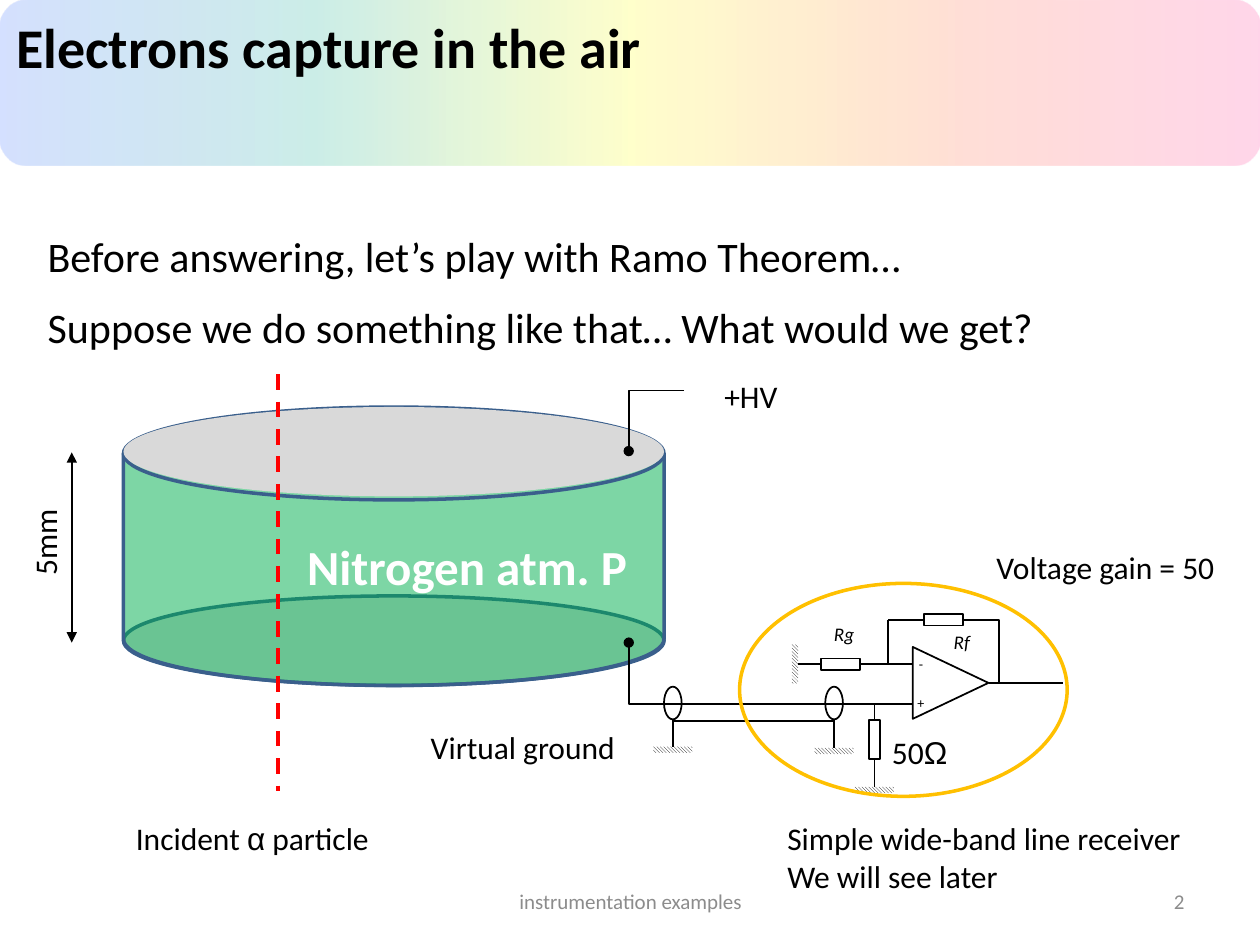
from lxml.etree import SubElement
from pptx import Presentation
from pptx.dml.color import RGBColor
from pptx.enum.dml import MSO_LINE, MSO_PATTERN
from pptx.enum.shapes import MSO_CONNECTOR, MSO_SHAPE
from pptx.enum.text import MSO_ANCHOR, MSO_AUTO_SIZE, PP_ALIGN
from pptx.oxml.ns import qn
from pptx.util import Inches, Pt

THEME = dict(
    font="Calibri", symbol="Arial",
    ink="000000", paper="FFFFFF", muted="8C8C8C", plate="D9D9D9", wall="3A5F8C",
    gas="00B050", particle="FF0000", ring="FFC000",
    rainbow=["FF3399", "FF6633", "FFFF00", "01A78F", "3366FF"],
    title=32, gas_label=28, body=24, label=18, footer=12, part=11, sign=8,
)
TOP, LEFT, BOTTOM, RIGHT = range(4)
W, H = 10, 7.5

# paragraphs of (text, font) runs, box, format
TEXTS = [
    ("Electrons capture in the air", (0.03, 0.05, 5.21, 0.64), dict(size="title", bold=True)),
    ("instrumentation examples", (3.42, 6.95, 3.17, 0.4),
     dict(size="footer", color="muted", align=PP_ALIGN.CENTER, middle=True, wrap=True)),
    ("2", (7.17, 6.95, 2.33, 0.4),
     dict(size="footer", color="muted", align=PP_ALIGN.RIGHT, middle=True, wrap=True)),
    ("Before answering, let’s play with Ramo Theorem…", (0.28, 1.78, 7.06, 0.5), dict(size="body")),
    ("Suppose we do something like that… What would we get?", (0.28, 2.34, 8.09, 0.5),
     dict(size="body")),
    ("5mm", (-0.01, 4.1, 0.73, 0.4), dict(rotation=270)),
    ("+HV", (5.65, 2.94, 0.63, 0.4), {}),
    ("Virtual ground", (3.32, 5.73, 1.68, 0.4), {}),
    ("Rf", (7.47, 4.95, 0.33, 0.29), dict(size="part", italic=True)),
    ("Rg", (6.52, 4.89, 0.36, 0.29), dict(size="part", italic=True)),
    ([[("50", "font"), ("Ω", "symbol")]], (6.98, 5.77, 0.65, 0.4), {}),
    ([[("Simple wide-band line receiver", "font")], [("We will see later", "font")]],
     (6.15, 6.45, 3.37, 0.71), {}),
    ([[("Incident ", "font"), ("α", "symbol"), (" particle", "font")]],
     (0.98, 6.45, 2.09, 0.4), {}),
    ("Nitrogen atm. P", (2.34, 4.21, 2.77, 0.57),
     dict(size="gas_label", color="paper", bold=True)),
    ("Voltage gain = 50", (7.81, 4.3, 1.95, 0.4), {}),
]

# circuit: long and short side of a resistor or a ground, centres of each part
RES, GND = (0.31, 0.09), (0.31, 0.05)
RESISTORS = {"Rf": (7.49, 4.92, False), "Rg": (6.67, 5.27, False), "R50": (6.94, 5.87, True)}
GROUNDS = {"gnd Rg": (6.31, 5.27, True), "gnd R50": (6.94, 6.27, False),
           "gnd near": (5.34, 5.95, False), "gnd far": (6.62, 5.96, False)}
COAX_X, COAX_SIZE, COAX_Y = (5.34, 6.62), (0.14, 0.26), 5.58
SIGNS = {"+": 5.58, "-": 5.27}

# each end is a point or (part, connection site)
WIRES = [
    ((7.24, 5.59), (7.07, 5.59)),
    (("gnd Rg", RIGHT), ("Rg", LEFT)),
    (("Rg", RIGHT), (7.24, 5.27)),
    ((7.05, 4.92), (7.05, 5.27)),
    ((7.05, 4.92), ("Rf", LEFT)),
    (("Rf", RIGHT), (7.76, 4.92)),
    ((6.94, 5.59), ("R50", TOP)),
    (("R50", BOTTOM), ("gnd R50", TOP)),
    ((5.34, 5.71), ("gnd near", TOP)),
    ((6.62, 5.71), ("gnd far", TOP)),
    ((5.34, 5.72), (6.62, 5.72)),
    ((7.85, 5.42), (8.44, 5.42)),
]
HV_LEAD = [(5.43, 3.1), (4.99, 3.1), (4.99, 3.58)]
SIGNAL_LEAD = [(7.07, 5.59), (4.99, 5.59), (4.99, 5.1)]
FEEDBACK = [(7.93, 5.42), (7.93, 4.92), (7.76, 4.92)]


def rgb(name):
    return RGBColor.from_string(THEME[name])


def box_at(cx, cy, size, upright=False):
    w, h = size[::-1] if upright else size
    return cx - w / 2, cy - h / 2, w, h


def write(tf, text, size="label", color="ink", bold=False, italic=False,
          align=PP_ALIGN.LEFT, middle=False, wrap=False):
    tf.word_wrap = wrap
    tf.vertical_anchor = MSO_ANCHOR.MIDDLE if middle else MSO_ANCHOR.TOP
    paragraphs = [[(text, "font")]] if isinstance(text, str) else text
    for i, runs in enumerate(paragraphs):
        p = tf.add_paragraph() if i else tf.paragraphs[0]
        p.alignment = align
        for words, face in runs:
            r = p.add_run()
            r.text = words
            f = r.font
            f.name, f.size, f.bold, f.italic = THEME[face], Pt(THEME[size]), bold, italic
            f.color.rgb = rgb(color)


def add_text(slide, text, box, rotation=0, **fmt):
    s = slide.shapes.add_textbox(*map(Inches, box))
    s.rotation = rotation
    write(s.text_frame, text, **fmt)
    if not fmt.get("wrap"):
        s.text_frame.auto_size = MSO_AUTO_SIZE.SHAPE_TO_FIT_TEXT


def set_line(s, color, width=1, **ends):
    if not color:
        s.line.fill.background()
        return
    s.line.color.rgb, s.line.width = rgb(color), Pt(width)
    for end, kind in ends.items():
        SubElement(s.line._get_or_add_ln(), qn(f"a:{end}End")).set("type", kind)


def add_shape(slide, kind, box, fill=None, line=None, width=1, rotation=0):
    s = slide.shapes.add_shape(kind, *map(Inches, box))
    s.shadow.inherit = False
    s.rotation = rotation
    if fill:
        s.fill.solid()
        s.fill.fore_color.rgb = rgb(fill)
    else:
        s.fill.background()
    set_line(s, line, width)
    return s


def add_wire(slide, begin, end, parts, color="ink", width=1, dash=None, **ends):
    glued = [isinstance(e[0], str) for e in (begin, end)]
    points = [(0, 0) if g else e for g, e in zip(glued, (begin, end))]
    c = slide.shapes.add_connector(MSO_CONNECTOR.STRAIGHT, *map(Inches, points[0] + points[1]))
    for g, e, connect in zip(glued, (begin, end), (c.begin_connect, c.end_connect)):
        if g:
            connect(parts[e[0]], e[1])
    if dash:
        c.line.dash_style = dash
    set_line(c, color, width, **ends)
    SubElement(c._element.spPr, qn("a:effectLst"))


def add_lead(slide, points, **ends):
    pts = [tuple(map(Inches, pt)) for pt in points]
    fb = slide.shapes.build_freeform(*pts[0])
    fb.add_line_segments(pts[1:], close=False)
    s = fb.convert_to_shape()
    s.shadow.inherit = False
    s.fill.background()
    set_line(s, "ink", **ends)


def add_banner(slide):
    s = add_shape(slide, MSO_SHAPE.ROUNDED_RECTANGLE, (0, 0, W, 1.31))
    s.fill.gradient()
    s.fill.gradient_angle = 180
    stops = s._element.spPr.find(qn("a:gradFill")).find(qn("a:gsLst"))
    for old in list(stops):
        stops.remove(old)
    colors = THEME["rainbow"]
    for i, color in enumerate(colors):
        gs = SubElement(stops, qn("a:gs"), pos=str(100000 * i // (len(colors) - 1)))
        clr = SubElement(gs, qn("a:srgbClr"), val=color)
        SubElement(clr, qn("a:alpha"), val="20000")


def add_chamber(slide):
    x, w, plate_h, top, bottom = 0.98, 4.29, 0.71, 3.23, 5.44
    h = bottom - top
    add_shape(slide, MSO_SHAPE.OVAL, (x, bottom - plate_h, w, plate_h), "plate", "wall", 2)
    drum = add_shape(slide, MSO_SHAPE.FLOWCHART_DIRECT_ACCESS_STORAGE,
                     (x + (w - h) / 2, top - (w - h) / 2, h, w), "gas", "wall", 2, 270)
    clr = drum._element.spPr.find(qn("a:solidFill"))[0]
    SubElement(clr, qn("a:alpha"), val="51000")
    add_shape(slide, MSO_SHAPE.OVAL, (x, top, w, plate_h), "plate")


def add_circuit(slide):
    add_lead(slide, HV_LEAD, tail="oval")
    add_lead(slide, SIGNAL_LEAD, tail="oval")
    add_shape(slide, MSO_SHAPE.ISOSCELES_TRIANGLE, (7.26, 5.12, 0.57, 0.6), "paper", "ink",
              rotation=90)
    for sign, y in SIGNS.items():
        s = add_shape(slide, MSO_SHAPE.OVAL, box_at(7.31, y, (0.1, 0.1)), "paper")
        tf = s.text_frame
        tf.margin_left = tf.margin_right = tf.margin_top = tf.margin_bottom = 0
        write(tf, sign, size="sign", align=PP_ALIGN.CENTER, middle=True)
    parts = {}
    for name, (x, y, upright) in RESISTORS.items():
        parts[name] = add_shape(slide, MSO_SHAPE.RECTANGLE, box_at(x, y, RES, upright),
                                "paper", "ink")
    for name, (x, y, upright) in GROUNDS.items():
        s = parts[name] = add_shape(slide, MSO_SHAPE.RECTANGLE, box_at(x, y, GND, upright))
        s.fill.patterned()
        s.fill.pattern = MSO_PATTERN.LIGHT_DOWNWARD_DIAGONAL
        s.fill.fore_color.rgb, s.fill.back_color.rgb = rgb("ink"), rgb("paper")
    for x in COAX_X:
        add_shape(slide, MSO_SHAPE.OVAL, box_at(x, COAX_Y, COAX_SIZE), line="ink")
    for begin, end in WIRES:
        add_wire(slide, begin, end, parts)
    add_lead(slide, FEEDBACK)
    add_shape(slide, MSO_SHAPE.OVAL, (5.87, 4.63, 2.6, 1.69), line="ring", width=2)


def main():
    prs = Presentation()
    prs.slide_width, prs.slide_height = Inches(W), Inches(H)
    slide = prs.slides.add_slide(prs.slide_layouts[6])
    add_banner(slide)
    add_chamber(slide)
    add_wire(slide, (0.57, 3.59), (0.57, 5.1), {}, head="triangle", tail="triangle")
    add_wire(slide, (2.21, 2.97), (2.21, 6.28), {}, "particle", 2.25, MSO_LINE.DASH)
    add_circuit(slide)
    for text, box, fmt in TEXTS:
        add_text(slide, text, box, **fmt)
    prs.save("out.pptx")


if __name__ == "__main__":
    main()
